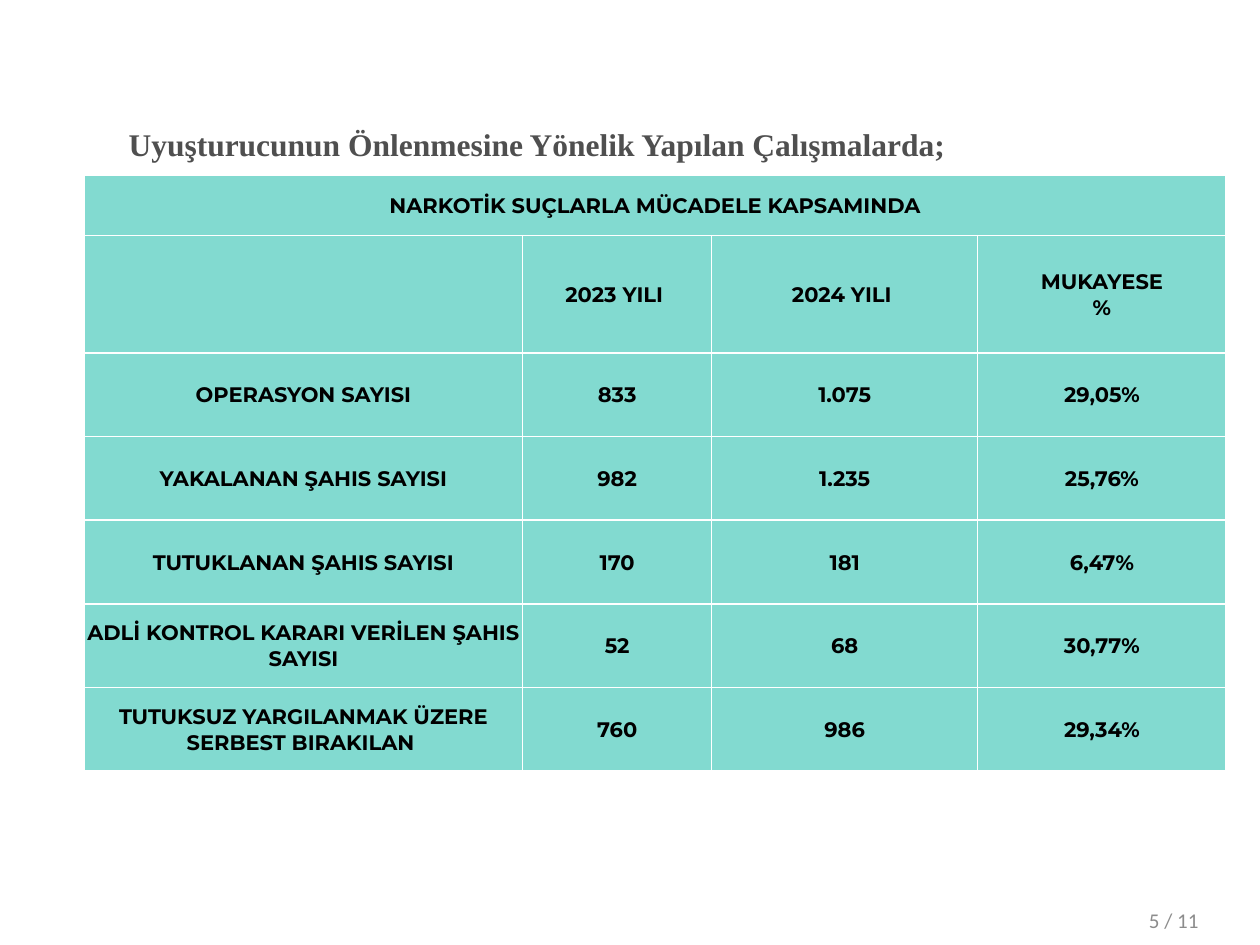
from lxml import etree
from pptx import Presentation
from pptx import util as u
from pptx.dml.color import RGBColor
from pptx.enum import text
from pptx.oxml import ns

HEADING = "NARKOTİK SUÇLARLA MÜCADELE KAPSAMINDA"
ROWS = [
    ("", "2023 YILI ", "2024 YILI ", "MUKAYESE\n%"),
    ("OPERASYON SAYISI", "833", "1.075", "29,05%"),
    ("YAKALANAN ŞAHIS SAYISI", "982", "1.235", "25,76%"),
    ("TUTUKLANAN ŞAHIS SAYISI", "170", "181", "6,47%"),
    ("ADLİ KONTROL KARARI VERİLEN ŞAHIS SAYISI", "52", "68", "30,77%"),
    ("TUTUKSUZ YARGILANMAK ÜZERE SERBEST BIRAKILAN ", "760", "986", "29,34%"),
]
COLUMN_WIDTHS = [250.5, 108, 152, 142]
ROW_HEIGHTS = [34.6, 67] + [47.8] * 5


def color(hex_value):
    """Return the colour for a hex string."""
    return RGBColor.from_string(hex_value)


def style_font(paragraph, name, size, hex_value, bold=False):
    """Set the font of a whole paragraph."""
    font = paragraph.font
    font.name, font.size, font.bold = name, u.Pt(size), bold
    font.color.rgb = color(hex_value)


def add_text(slide, bounds, wording, name, size, hex_value, bold=False):
    """Add a one-paragraph text box and return its paragraph."""
    box = slide.shapes.add_textbox(*map(u.Pt, bounds))
    box.text_frame.word_wrap = True
    paragraph = box.text_frame.paragraphs[0]
    paragraph.text = wording
    style_font(paragraph, name, size, hex_value, bold)
    return paragraph


def add_borders(cell, hex_value, width):
    """Draw a solid line on all four sides of a cell."""
    properties = cell._tc.get_or_add_tcPr()
    for position, side in enumerate(("lnL", "lnR", "lnT", "lnB")):
        line = etree.Element(ns.qn(f"a:{side}"), w=str(u.Pt(width)))
        fill = etree.SubElement(line, ns.qn("a:solidFill"))
        etree.SubElement(fill, ns.qn("a:srgbClr"), val=hex_value)
        properties.insert(position, line)


def fill_cell(cell, wording):
    """Write and style one table cell."""
    cell.fill.solid()
    cell.fill.fore_color.rgb = color("82DAD0")
    cell.vertical_anchor = text.MSO_ANCHOR.MIDDLE
    cell.margin_left = cell.margin_right = cell.margin_top = u.Pt(0.7)
    cell.margin_bottom = u.Pt(0)
    paragraph = cell.text_frame.paragraphs[0]
    paragraph.text = wording
    paragraph.alignment = text.PP_ALIGN.CENTER
    style_font(paragraph, "Montserrat", 12, "000000", True)
    add_borders(cell, "FFFFFF", 1)


def add_comparison_table(slide):
    """Add the table that compares the two years."""
    contents = [(HEADING, "", "", "")] + ROWS
    frame = slide.shapes.add_table(
        len(contents), len(COLUMN_WIDTHS), u.Pt(48.2), u.Pt(100.1),
        u.Pt(sum(COLUMN_WIDTHS)), u.Pt(sum(ROW_HEIGHTS)))
    table = frame.table
    for column, width in zip(table.columns, COLUMN_WIDTHS):
        column.width = u.Pt(width)
    for row, height, wordings in zip(table.rows, ROW_HEIGHTS, contents):
        row.height = u.Pt(height)
        for cell, wording in zip(row.cells, wordings):
            fill_cell(cell, wording)
    table.cell(0, 0).merge(table.cell(0, len(COLUMN_WIDTHS) - 1))


def add_title(slide):
    """Add the justified title with its first-line indent."""
    title = add_text(slide, (31, 66.2, 595.4, 29.5),
                     "Uyuşturucunun Önlenmesine Yönelik Yapılan Çalışmalarda;",
                     "Times New Roman", 18, "4F4F4F", True)
    title.alignment = text.PP_ALIGN.JUSTIFY
    title.line_spacing = 1.07
    title.space_after = u.Pt(8)
    title._p.get_or_add_pPr().set("indent", str(u.Pt(35.4)))


def main():
    """Build and save the slide."""
    presentation = Presentation()
    presentation.slide_width, presentation.slide_height = u.Pt(720), u.Pt(540)
    slide = presentation.slides.add_slide(presentation.slide_layouts[6])
    add_text(slide, (649.5, 514.8, 124.5, 21.6), "5 / 11", "Calibri", 12, "8C8C8C")
    add_comparison_table(slide)
    add_title(slide)
    presentation.save("out.pptx")


if __name__ == "__main__":
    main()
